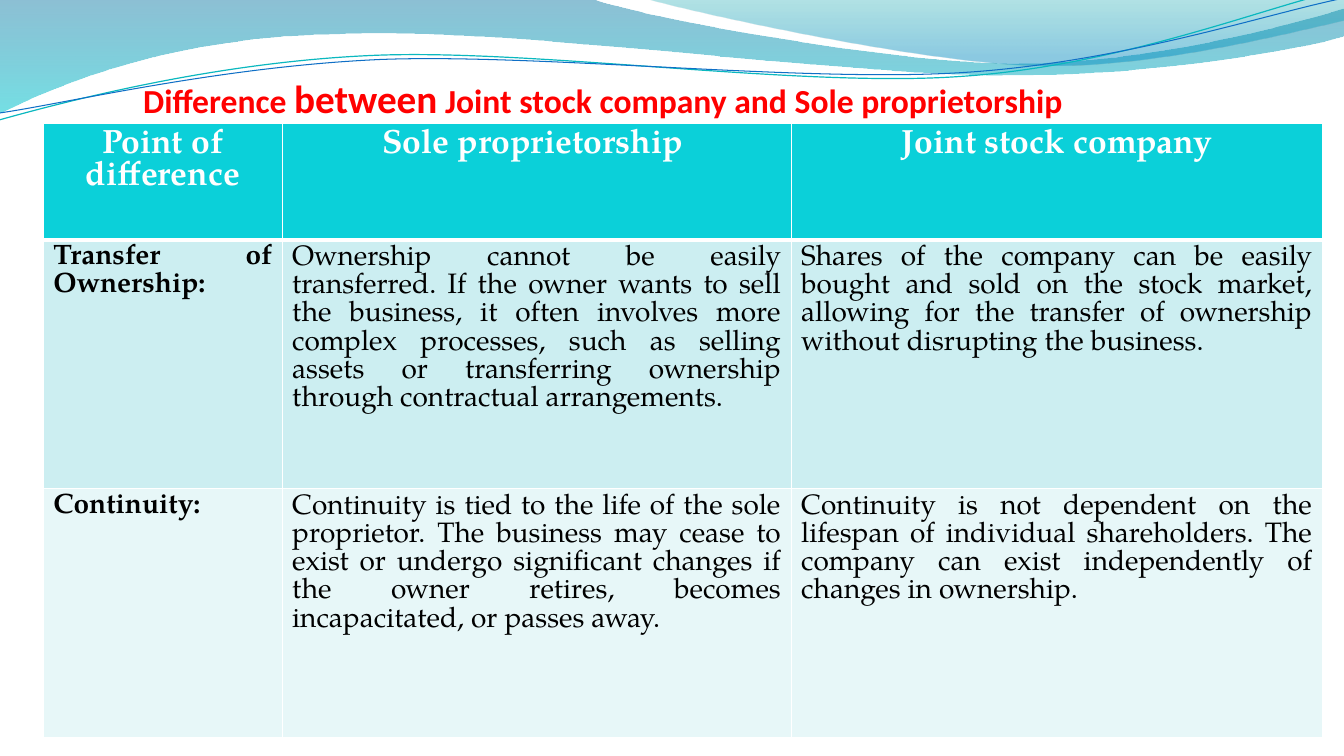
from dataclasses import dataclass

from lxml.etree import SubElement
from pptx import Presentation
from pptx.dml.color import RGBColor
from pptx.enum.text import MSO_AUTO_SIZE, PP_ALIGN
from pptx.oxml.ns import qn
from pptx.util import Pt


@dataclass(frozen=True)
class Theme:
    head_font: str = "Calibri"
    body_font: str = "TeX Gyre Pagella"
    red: str = "FF0000"
    white: str = "FFFFFF"
    black: str = "000000"
    header: str = "0BD0D9"
    bands: tuple = ("CCEEF1", "E7F7F8")
    teal_line: str = "0AB8BF"
    blue_line: str = "0F6FC6"
    title_size: float = 24
    accent_size: float = 28
    header_size: float = 24
    body_size: float = 20
    bold_leading: float = 0.98
    plain_leading: float = 1.01


T = Theme()
CURVE_TILT = 357.3

LEFT_WAVE = [
    (0, 0), (422.6, -0.7),
    (456.5, 12.2, 637.2, 45.4, 727.9, 45.4),
    (819.4, 45.4, 920.2, 18.7, 959.8, 6.5),
    (961.2, 25.9),
    (943.9, 31.7, 835.2, 54.7, 715.7, 54),
    (596.9, 54, 366.5, 20.2, 247, 24.5),
    (123.1, 25.9, 43.9, 59.8, -0.7, 81.4),
    (0, 0),
]
RIGHT_WAVE = [
    (460.1, -0.7),
    (488.9, 7.9, 654.5, 44.6, 738, 46.8),
    (821.5, 49.7, 923, 23, 959.8, 15.1),
    (959.8, 0), (460.1, -0.7),
]
TEAL_CURVE = [
    (-2.3, 63.1),
    (45.1, 52.3, 152.1, 29.2, 266, 29.6),
    (379.8, 29.9, 567.7, 66.8, 683.2, 64.4),
    (798.5, 62.6, 902.6, 25.7, 960.1, 15.4),
]
BLUE_CURVE = [
    (-1.3, 58),
    (44.4, 53.7, 157.2, 32.3, 272.4, 32.7),
    (386.9, 33.8, 572.2, 63.4, 687, 61.6),
    (802.3, 59.8, 904.6, 30, 962.1, 21.2),
]

COLUMNS = (170.64, 363.6, 379.44)
ROWS = (82.8, 177.84, 177.84)
CELLS = [
    ("Point of difference", "Sole proprietorship ", "Joint stock company"),
    ("Transfer of Ownership:",
     "Ownership cannot be easily transferred. If the owner wants to sell the "
     "business, it often involves more complex processes, such as selling "
     "assets or transferring ownership through contractual arrangements.",
     "Shares of the company can be easily bought and sold on the stock market, "
     "allowing for the transfer of ownership without disrupting the business."),
    ("Continuity:",
     "Continuity is tied to the life of the sole proprietor. The business may "
     "cease to exist or undergo significant changes if the owner retires, "
     "becomes incapacitated, or passes away.",
     "Continuity is not dependent on the lifespan of individual shareholders. "
     "The company can exist independently of changes in ownership."),
]


def set_attrs(obj, values):
    for name, value in values.items():
        setattr(obj, name, value)


def add_run(p, text, font, size, color, bold):
    r = p.add_run()
    r.text = text
    set_attrs(r.font, {"name": font, "size": Pt(size), "bold": bold})
    r.font.color.rgb = RGBColor.from_string(color)


def bend_lines(s, segments):
    lines = iter(list(s._element.iter(qn("a:lnTo"))))
    for seg in segments:
        group = [next(lines) for _ in range(len(seg) // 2)]
        if len(group) == 3:
            first, *others = group
            curve = first.makeelement(qn("a:cubicBezTo"))
            first.addprevious(curve)
            for line in group:
                curve.append(line[0])
                line.getparent().remove(line)


def add_outline(slide, segments, close):
    points = [(Pt(seg[i]), Pt(seg[i + 1]))
              for seg in segments for i in range(0, len(seg), 2)]
    builder = slide.shapes.build_freeform(*points[0], scale=1.0)
    builder.add_line_segments(points[1:], close=close)
    s = builder.convert_to_shape()
    s.shadow.inherit = False
    bend_lines(s, segments[1:])
    return s


def add_wave(slide, segments, stops):
    s = add_outline(slide, segments, True)
    s.line.fill.background()
    s.fill.gradient()
    s.fill.gradient_angle = 270
    for stop, (position, color, _) in zip(s.fill.gradient_stops, stops):
        stop.position = position
        stop.color.rgb = RGBColor.from_string(color)
    for clr, (_, _, alpha) in zip(s._element.spPr.iter(qn("a:srgbClr")), stops):
        SubElement(clr, qn("a:alpha")).set("val", str(alpha * 1000))


def add_curve(slide, segments, color, width):
    s = add_outline(slide, segments, False)
    s.rotation = CURVE_TILT
    s.fill.background()
    s.line.color.rgb = RGBColor.from_string(color)
    s.line.width = Pt(width)


def add_borders(cell, widths):
    tcPr = cell._tc.get_or_add_tcPr()
    for side, width in zip("LRTB", widths):
        ln = SubElement(tcPr, qn(f"a:ln{side}"), w=str(Pt(width)))
        fill = SubElement(ln, qn("a:solidFill"))
        SubElement(fill, qn("a:srgbClr"), val=T.white)


def fill_cell(cell, text, row, col):
    header = row == 0
    bold = header or col == 0
    size = T.header_size if header else T.body_size
    add_borders(cell, (1, 1, 3 if row == 1 else 1, 3 if header else 1))
    cell.fill.solid()
    color = T.header if header else T.bands[row - 1]
    cell.fill.fore_color.rgb = RGBColor.from_string(color)
    p = cell.text_frame.paragraphs[0]
    set_attrs(p, {
        "alignment": PP_ALIGN.CENTER if header else PP_ALIGN.JUSTIFY,
        "line_spacing": Pt(size * (T.bold_leading if bold else T.plain_leading)),
    })
    add_run(p, text, T.body_font, size, T.white if header else T.black, bold)


def add_comparison(slide):
    table = slide.shapes.add_table(
        len(ROWS), len(COLUMNS), Pt(30.9), Pt(88.4),
        Pt(sum(COLUMNS)), Pt(sum(ROWS))).table
    table.horz_banding = False
    for column, width in zip(table.columns, COLUMNS):
        column.width = Pt(width)
    for i, (height, texts) in enumerate(zip(ROWS, CELLS)):
        table.rows[i].height = Pt(height)
        for j, text in enumerate(texts):
            fill_cell(table.cell(i, j), text, i, j)


def add_title(slide, parts):
    tf = slide.shapes.add_textbox(Pt(67.7), Pt(49.7), Pt(820.8), Pt(41)).text_frame
    set_attrs(tf, {"word_wrap": True, "auto_size": MSO_AUTO_SIZE.SHAPE_TO_FIT_TEXT})
    p = tf.paragraphs[0]
    p.alignment = PP_ALIGN.JUSTIFY
    p._p.get_or_add_pPr().set("indent", str(Pt(27.5)))
    for text, size in parts:
        add_run(p, text, T.head_font, size, T.red, True)


def main():
    prs = Presentation()
    set_attrs(prs, {"slide_width": Pt(960), "slide_height": Pt(540)})
    slide = prs.slides.add_slide(prs.slide_layouts[6])
    add_wave(slide, LEFT_WAVE, [(0, "0074A1", 45), (1, "00C6CF", 55)])
    add_wave(slide, RIGHT_WAVE, [(0, "00A1A9", 30), (0.8, "008BBF", 45)])
    add_curve(slide, TEAL_CURVE, T.teal_line, 0.85)
    add_curve(slide, BLUE_CURVE, T.blue_line, 0.75)
    add_comparison(slide)
    add_title(slide, [("Difference ", T.title_size), ("between", T.accent_size),
                      (" Joint stock company and Sole proprietorship ", T.title_size)])
    prs.save("out.pptx")


if __name__ == "__main__":
    main()
